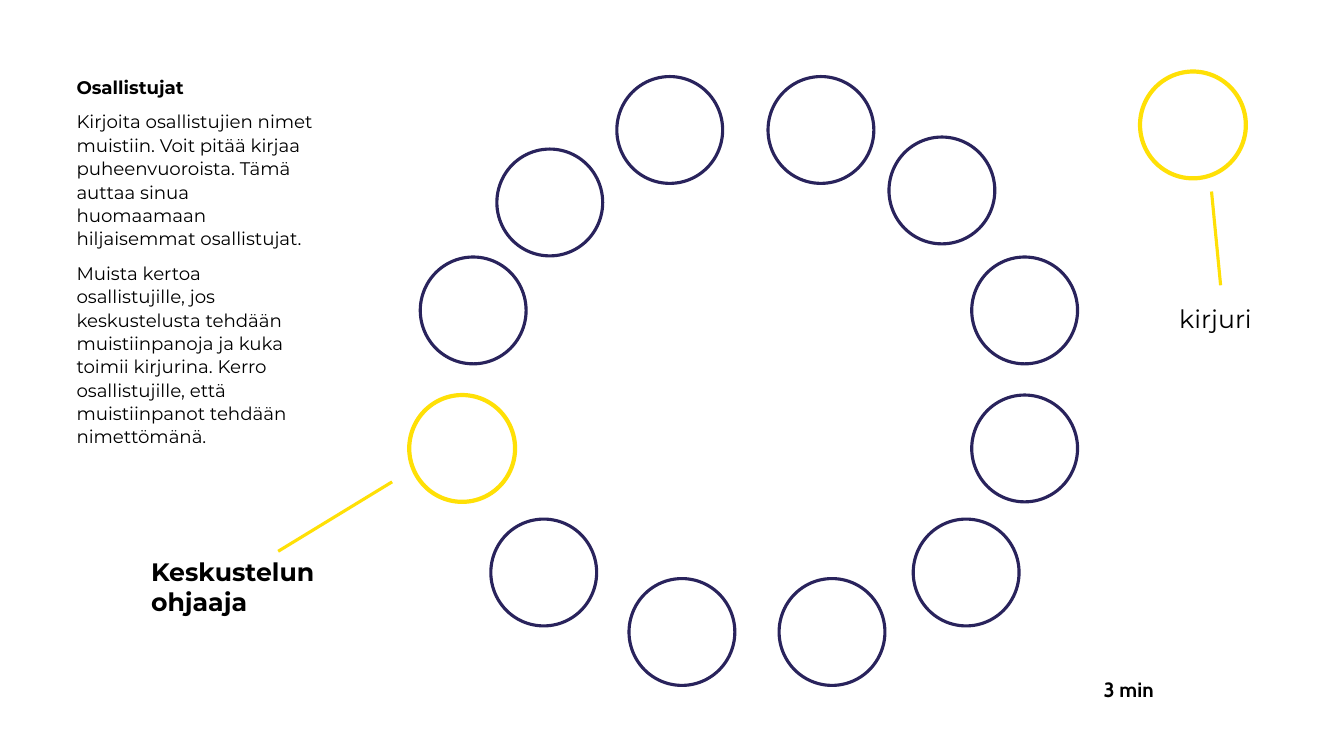
from dataclasses import dataclass

from lxml import etree
from pptx import Presentation
from pptx.dml.color import RGBColor
from pptx.enum.shapes import MSO_CONNECTOR, MSO_SHAPE
from pptx.enum.text import MSO_AUTO_SIZE, PP_ALIGN
from pptx.oxml.ns import qn
from pptx.util import Pt

ELLIPSE = MSO_SHAPE.OVAL
STRAIGHT = MSO_CONNECTOR.STRAIGHT
FIT_SHAPE = MSO_AUTO_SIZE.SHAPE_TO_FIT_TEXT
LEFT = PP_ALIGN.LEFT
JUSTIFY = PP_ALIGN.JUSTIFY


@dataclass(frozen=True)
class Theme:
    """Colours, fonts, type sizes and line widths of the slide."""
    text: RGBColor = RGBColor(0x00, 0x00, 0x00)
    participant: RGBColor = RGBColor(0x29, 0x23, 0x5C)
    role: RGBColor = RGBColor(0xFF, 0xE0, 0x06)
    font: str = "Montserrat"
    timer_font: str = "Cabin"
    body_size: float = 13
    label_size: float = 18
    timer_size: float = 14.7
    thin: float = 2.25
    thick: float = 3


THEME = Theme()
SEAT_WIDTH, SEAT_HEIGHT = 75.6, 76.3

HEADING = "Osallistujat"
INSTRUCTIONS = [
    "Kirjoita osallistujien nimet muistiin. Voit pitää kirjaa puheenvuoroista. "
    "Tämä auttaa sinua huomaamaan hiljaisemmat osallistujat.",
    "Muista kertoa osallistujille, jos keskustelusta tehdään muistiinpanoja ja "
    "kuka toimii kirjurina. Kerro osallistujille, että muistiinpanot tehdään "
    "nimettömänä.",
]

GUIDE_SEAT = (0, 227.5)
PARTICIPANT_SEATS = [
    (7.9, 128.9), (62.6, 51.8), (148.3, 0), (256.3, 0), (342.7, 43.2),
    (401.8, 128.9), (401.8, 227.5), (360, 316.1), (264.2, 358.6),
    (157, 358.6), (58.3, 316.1),
]


def add_text(slide, box, paragraphs, *, size, font=THEME.font, bold_count=0,
             margins=(7.2, 3.6), align=LEFT, spacing=1.0, after=0, wrap=True):
    """Add a text box whose first bold_count paragraphs are bold."""
    shape = slide.shapes.add_textbox(*map(Pt, box))
    frame = shape.text_frame
    frame.word_wrap = wrap
    frame.auto_size = FIT_SHAPE
    frame.margin_left = frame.margin_right = Pt(margins[0])
    frame.margin_top = frame.margin_bottom = Pt(margins[1])
    for index, text in enumerate(paragraphs):
        paragraph = frame.add_paragraph() if index else frame.paragraphs[0]
        paragraph.alignment = align
        paragraph.line_spacing = spacing
        paragraph.space_after = Pt(after)
        run = paragraph.add_run()
        run.text = text
        run.font.name = font
        run.font.size = Pt(size)
        run.font.bold = index < bold_count
        run.font.color.rgb = THEME.text


def add_seat(slide, left, top, color, width):
    """Add one unfilled seat circle."""
    shape = slide.shapes.add_shape(
        ELLIPSE, Pt(left), Pt(top), Pt(SEAT_WIDTH), Pt(SEAT_HEIGHT))
    shape.shadow.inherit = False
    shape.fill.background()
    shape.line.color.rgb = color
    shape.line.width = Pt(width)


def add_pointer(slide, start, end):
    """Add a line that ties a role label to its seat."""
    connector = slide.shapes.add_connector(STRAIGHT, *map(Pt, (*start, *end)))
    connector.line.color.rgb = THEME.role
    connector.line.width = Pt(THEME.thin)
    properties = connector._element.spPr
    etree.SubElement(properties, qn("a:effectLst"))


def add_instructions(slide, box):
    """Add the heading and the advice on participants."""
    add_text(slide, box, [HEADING, *INSTRUCTIONS], size=THEME.body_size,
             bold_count=1, margins=(15.1, 15.1), spacing=1.07, after=8)


def add_seating_ring(slide, box):
    """Add the ring of participants with the guide among them."""
    left, top = box[:2]
    for x, y in PARTICIPANT_SEATS:
        add_seat(slide, left + x, top + y, THEME.participant, THEME.thin)
    add_seat(slide, left + GUIDE_SEAT[0], top + GUIDE_SEAT[1],
             THEME.role, THEME.thick)


def add_guide_label(slide, box):
    """Add the guide's label below a line rising to the seat."""
    left, top, width, height = box
    add_pointer(slide, (left + 97.9, top + 49.6), (left + 179.3, top))
    add_text(slide, (left, top + 49.6, width, height - 49.6),
             ["Keskustelun ohjaaja"], size=THEME.label_size, bold_count=1)


def add_scribe(slide, box):
    """Add the scribe's seat, line and label."""
    left, top = box[:2]
    add_seat(slide, left, top, THEME.role, THEME.thick)
    add_pointer(slide, (left + 51.1, top + 85.7), (left + 57.6, top + 152.7))
    add_text(slide, (left + 20.9, top + 162, 66.2, 28.8), ["kirjuri"],
             size=THEME.label_size, wrap=False)


def add_timer(slide, box):
    """Add the time allotted to the step."""
    add_text(slide, box, ["3 min"], size=THEME.timer_size,
             font=THEME.timer_font, bold_count=1, margins=(9.4, 9.4),
             align=JUSTIFY, spacing=1.15)


def main():
    """Build and save the participants slide."""
    presentation = Presentation()
    presentation.slide_width = Pt(960)
    presentation.slide_height = Pt(540)
    slide = presentation.slides.add_slide(presentation.slide_layouts[6])
    add_instructions(slide, (39.6, 38.2, 198.7, 290.9))
    add_seating_ring(slide, (292.3, 54.7, 477.4, 434.9))
    add_guide_label(slide, (100.8, 344.2, 195.1, 78.4))
    add_scribe(slide, (814.3, 51.1, 87.1, 190.8))
    add_timer(slide, (779, 471.6, 94.3, 39.6))
    presentation.save("out.pptx")


if __name__ == "__main__":
    main()
